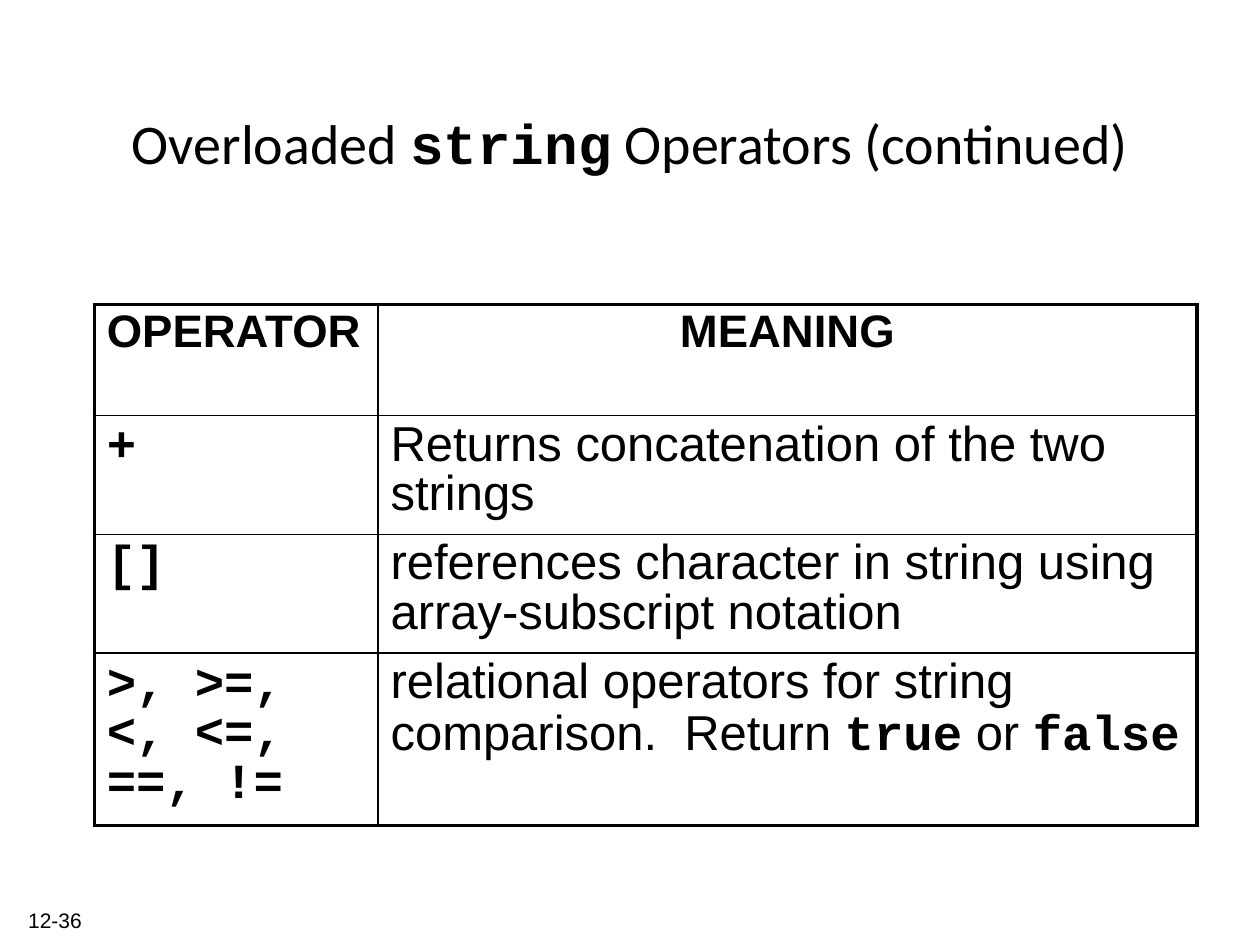
from lxml.etree import SubElement
from pptx import Presentation
from pptx.dml.color import RGBColor
from pptx.enum.text import MSO_ANCHOR as Anchor, PP_ALIGN as Align
from pptx.oxml.ns import qn
from pptx.util import Cm, Pt

BLACK = RGBColor(0, 0, 0)
SANS, CODE = "Arial", "Courier New"
THICK, THIN = Pt(2.25), Pt(1)


def add_runs(paragraph, pieces, size):
    for words, font_name, bold in pieces:
        run = paragraph.add_run()
        run.text = words
        run.font.name = font_name
        run.font.size = Pt(size)
        run.font.bold = bold
        run.font.color.rgb = BLACK


def add_border(cell, side, width):
    line = SubElement(cell._tc.get_or_add_tcPr(), qn(f"a:ln{side}"), w=str(width))
    fill = SubElement(line, qn("a:solidFill"))
    SubElement(fill, qn("a:srgbClr"), val=str(BLACK))


prs = Presentation()
prs.slide_width, prs.slide_height = Cm(25.4), Cm(19.05)
slide = prs.slides.add_slide(prs.slide_layouts[5])

title = slide.shapes.title
title.left, title.top, title.width, title.height = Cm(1.06), Cm(1.27), Cm(23.28), Cm(3.18)
title.text_frame.vertical_anchor = Anchor.MIDDLE
heading = title.text_frame.paragraphs[0]
heading.alignment = Align.CENTER
add_runs(heading, [("Overloaded ", "Calibri", False), ("string", CODE, True),
                   (" Operators (continued)", "Calibri", False)], 32)

operators = [
    ([("OPERATOR", SANS, True)], [("MEANING", SANS, True)]),
    ([("+", CODE, True)], [("Returns concatenation of the two strings", SANS, False)]),
    ([("[]", CODE, True)],
     [("references character in string using array-subscript notation", SANS, False)]),
    ([(">, >=, <, <=, ==, !=", CODE, True)],
     [("relational operators for string comparison.  Return ", SANS, False),
      ("true", CODE, True), (" or ", SANS, False), ("false", CODE, True)]),
]
column_widths = [Cm(5.72), Cm(16.51)]
row_heights = [Cm(2.24), Cm(2.39), Cm(2.39), Cm(3.48)]
last_row, last_column = len(row_heights) - 1, len(column_widths) - 1

table = slide.shapes.add_table(len(row_heights), len(column_widths), Cm(1.9), Cm(6.14),
                               sum(column_widths), sum(row_heights)).table
table.first_row = table.horz_banding = False
for column, width in zip(table.columns, column_widths):
    column.width = width
for row, height in zip(table.rows, row_heights):
    row.height = height

for r, entry in enumerate(operators):
    for c, pieces in enumerate(entry):
        cell = table.cell(r, c)
        outer_edges = {"L": c == 0, "R": c == last_column, "T": r == 0, "B": r == last_row}
        for side, outer in outer_edges.items():
            add_border(cell, side, THICK if outer else THIN)
        cell.fill.background()
        paragraph = cell.text_frame.paragraphs[0]
        paragraph.line_spacing = 0.9
        before = SubElement(paragraph._p.get_or_add_pPr(), qn("a:spcBef"))
        SubElement(before, qn("a:spcPct"), val="20000")
        if r == 0 and c == last_column:
            paragraph.alignment = Align.CENTER
        add_runs(paragraph, pieces, 26 if r == 0 else 28)

page_number = slide.shapes.add_textbox(Cm(0), Cm(18.03), Cm(1.9), Cm(1.02)).text_frame
page_number.word_wrap = True
page_number.vertical_anchor = Anchor.MIDDLE
page_number.paragraphs[0].alignment = Align.RIGHT
add_runs(page_number.paragraphs[0], [("12-36", SANS, False)], 12)

prs.save("out.pptx")
